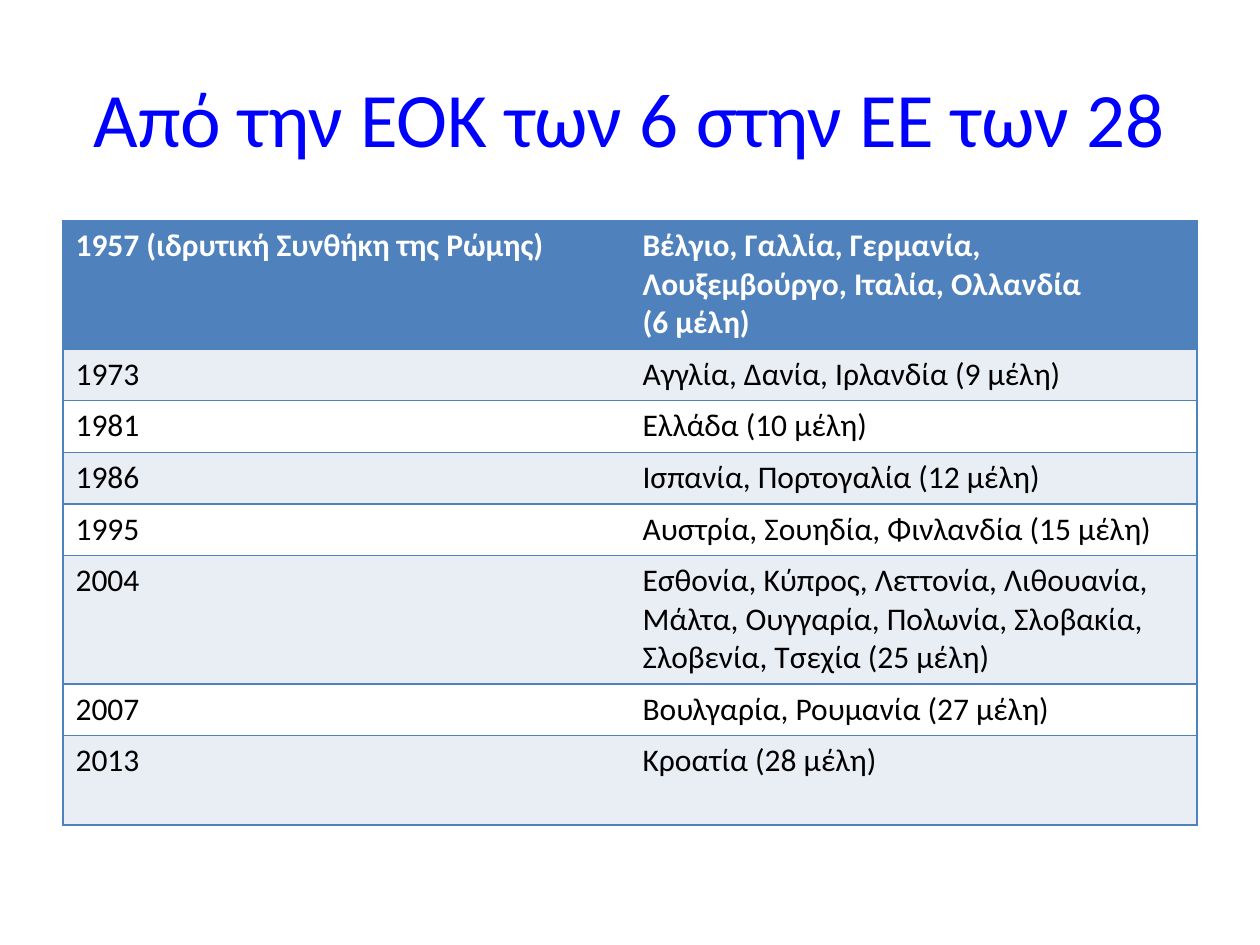
from lxml import etree
from pptx import Presentation
from pptx.dml.color import RGBColor
from pptx.enum.text import MSO_ANCHOR, PP_ALIGN
from pptx.oxml.ns import qn
from pptx.util import Inches, Pt

CENTER = PP_ALIGN.CENTER
MIDDLE = MSO_ANCHOR.MIDDLE
TITLE_ONLY = 5

WIDTH, HEIGHT = Inches(10), Inches(7.5)
MARGIN = 0.05
FONT = "Calibri"
BLUE, BAND, WHITE, BLACK = "4F81BD", "E9EDF4", "FFFFFF", "000000"
TITLE_FORMAT = {"name": FONT, "size": Pt(44), "bold": False}
CELL_FORMAT = {"name": FONT, "size": Pt(18)}

TITLE = "Από την ΕΟΚ των 6 στην ΕΕ των 28"
ROWS = [
    ("1957 (ιδρυτική Συνθήκη της Ρώμης)",
     "Βέλγιο, Γαλλία, Γερμανία, Λουξεμβούργο, Ιταλία, Ολλανδία\n(6 μέλη)", 1.02),
    ("1973", "Αγγλία, Δανία, Ιρλανδία (9 μέλη)", 0.41),
    ("1981", "Ελλάδα (10 μέλη)", 0.41),
    ("1986", "Ισπανία, Πορτογαλία (12 μέλη)", 0.41),
    ("1995", "Αυστρία, Σουηδία, Φινλανδία (15 μέλη)", 0.41),
    ("2004",
     "Εσθονία, Κύπρος, Λεττονία, Λιθουανία, Μάλτα, Ουγγαρία, Πολωνία, "
     "Σλοβακία, Σλοβενία, Τσεχία (25 μέλη)", 1.02),
    ("2007", "Βουλγαρία, Ρουμανία (27 μέλη)", 0.41),
    ("2013", "Κροατία (28 μέλη)", 0.71),
]


def rgb(value):
    return RGBColor.from_string(value)


def format_font(font, values, color):
    for name, value in values.items():
        setattr(font, name, value)
    font.color.rgb = rgb(color)


def set_borders(cell, sides):
    tcPr = cell._tc.get_or_add_tcPr()
    for side in "LRTB":
        ln = etree.SubElement(tcPr, qn(f"a:ln{side}"), w=str(Pt(1)))
        if side in sides:
            fill = etree.SubElement(ln, qn("a:solidFill"))
            etree.SubElement(fill, qn("a:srgbClr"), val=BLUE)
        else:
            etree.SubElement(ln, qn("a:noFill"))


def fill_cell(cell, text, fill, color, bold, sides):
    cell.text = text
    set_borders(cell, sides)
    cell.fill.solid()
    cell.fill.fore_color.rgb = rgb(fill)
    for p in cell.text_frame.paragraphs:
        for r in p.runs:
            format_font(r.font, {**CELL_FORMAT, "bold": bold}, color)


def add_title(s):
    sp = s.shapes.title
    sp.left, sp.top = int(WIDTH * MARGIN), int(HEIGHT * 0.04)
    sp.width, sp.height = int(WIDTH * (1 - 2 * MARGIN)), Inches(1.25)
    tf = sp.text_frame
    tf.text = TITLE
    tf.vertical_anchor = MIDDLE
    p = tf.paragraphs[0]
    p.alignment = CENTER
    format_font(p.runs[0].font, TITLE_FORMAT, "0000FF")


def add_members_table(s):
    height = Inches(sum(row[-1] for row in ROWS))
    table = s.shapes.add_table(
        len(ROWS), 2, int(WIDTH * MARGIN), Inches(1.75),
        int(WIDTH * (1 - 2 * MARGIN)), height).table
    for i, (year, members, row_height) in enumerate(ROWS):
        table.rows[i].height = Inches(row_height)
        header = i == 0
        fill = BLUE if header else BAND if i % 2 else WHITE
        color = WHITE if header else BLACK
        for j, (text, sides) in enumerate(((year, "LTB"), (members, "RTB"))):
            fill_cell(table.cell(i, j), text, fill, color, header, sides)


def main():
    prs = Presentation()
    prs.slide_width, prs.slide_height = WIDTH, HEIGHT
    s = prs.slides.add_slide(prs.slide_layouts[TITLE_ONLY])
    add_title(s)
    add_members_table(s)
    prs.save("out.pptx")


if __name__ == "__main__":
    main()
